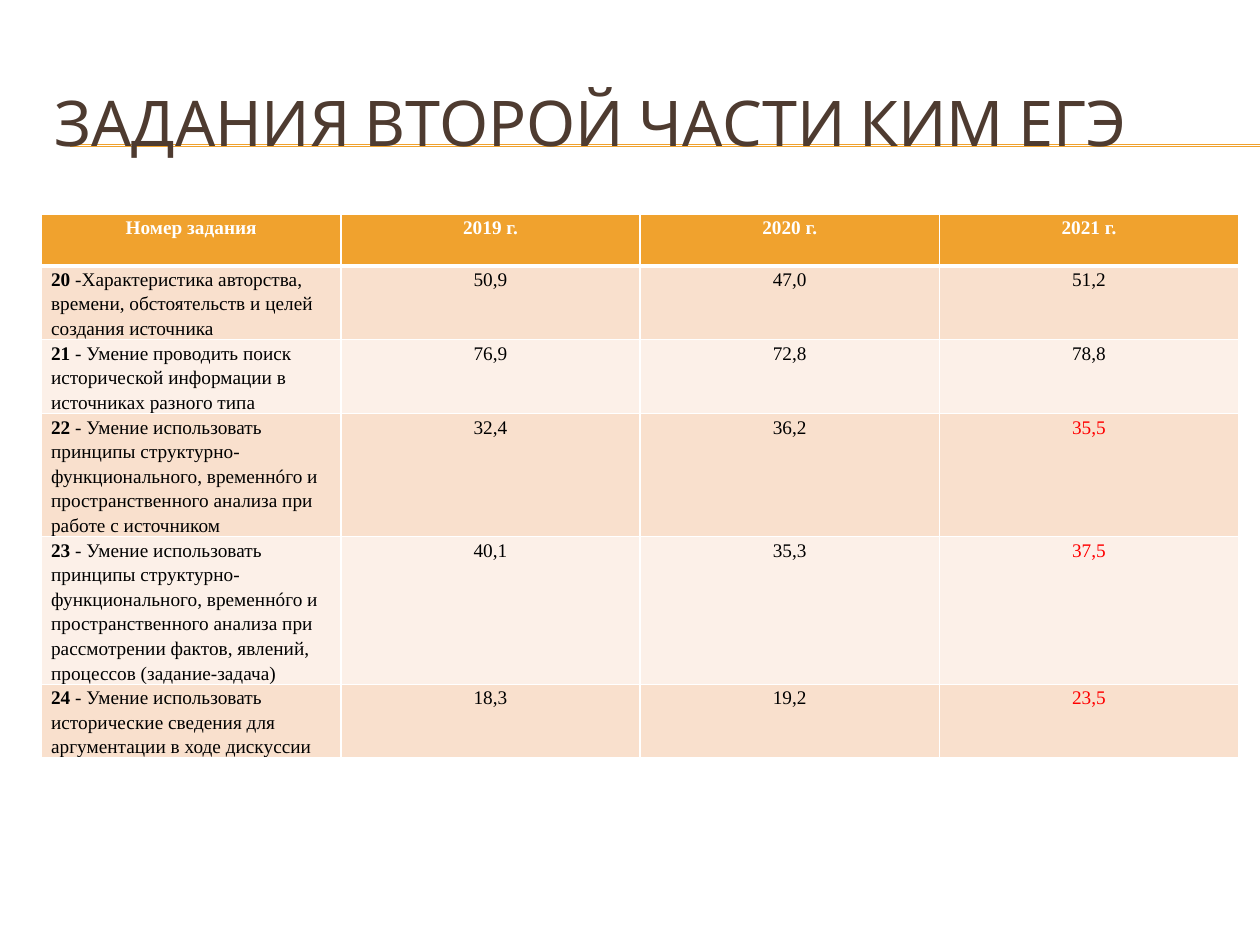
from lxml import etree
from pptx import Presentation
from pptx.dml.color import RGBColor
from pptx.enum.shapes import MSO_CONNECTOR
from pptx.enum.text import MSO_ANCHOR, MSO_AUTO_SIZE, PP_ALIGN
from pptx.oxml.ns import qn
from pptx.util import Cm, Pt

STRAIGHT = MSO_CONNECTOR.STRAIGHT
MIDDLE = MSO_ANCHOR.MIDDLE
NO_AUTOFIT = MSO_AUTO_SIZE.NONE
LEFT, CENTER = PP_ALIGN.LEFT, PP_ALIGN.CENTER

# Content
TITLE = "ЗАДАНИЯ ВТОРОЙ ЧАСТИ КИМ ЕГЭ"
HEADERS = ["Номер задания", "2019 г.", "2020 г.", "2021 г."]
TASKS = [
    ("20", " -Характеристика авторства, времени, обстоятельств и целей создания источника",
     ["50,9", "47,0", "51,2"]),
    ("21", " - Умение проводить поиск исторической информации в источниках разного типа",
     ["76,9", "72,8", "78,8"]),
    ("22", " - Умение использовать принципы структурно-функционального, временнóго и "
           "пространственного анализа при работе с источником",
     ["32,4", "36,2", "35,5"]),
    ("23", " - Умение использовать принципы структурно-функционального, временнóго и "
           "пространственного анализа при рассмотрении фактов, явлений, процессов (задание-задача)",
     ["40,1", "35,3", "37,5"]),
    ("24", " - Умение использовать исторические сведения для аргументации в ходе дискуссии",
     ["18,3", "19,2", "23,5"]),
]
HIGHLIGHTED = {"35,5", "37,5", "23,5"}

THEME = {
    "title_font": "Cabin", "title_size": Pt(36), "title": "4E3B30",
    "table_font": "Times New Roman", "table_size": Pt(11),
    "accent": "F0A22E", "bands": ["F9E0CD", "FCF0E8"],
    "text": "000000", "light": "FFFFFF", "highlight": "FF0000",
    "rule": Pt(0.75), "border": Pt(1), "header_border": Pt(3),
}

# Layout
WIDTH, HEIGHT = Cm(25.4), Cm(19.05)
MARGIN, CONTENT_WIDTH = Cm(0.84), Cm(24.13)
TITLE_TOP, TITLE_HEIGHT = Cm(1.27), Cm(2.34)
TABLE_TOP, ROW_HEIGHT = Cm(4.32), Cm(1.04)
RULE_LEFT, RULE_TOPS = Cm(1.42), [Cm(2.92), Cm(2.95)]
CELL_INSET = Cm(0.19)


def color(name):
    return RGBColor.from_string(name)


def style_span(span, font, size, fill, bold=False):
    span.font.name = font
    span.font.size = size
    span.font.bold = bold
    span.font.color.rgb = color(fill)


def add_rule(slide, top):
    rule = slide.shapes.add_connector(STRAIGHT, RULE_LEFT, top, WIDTH, top)
    rule.line.color.rgb = color(THEME["accent"])
    rule.line.width = THEME["rule"]
    etree.SubElement(rule._element.spPr, qn("a:effectLst"))


def add_borders(cell, top, bottom):
    properties = cell._tc.get_or_add_tcPr()
    widths = {"L": THEME["border"], "R": THEME["border"], "T": top, "B": bottom}
    for side, width in widths.items():
        line = etree.SubElement(properties, qn(f"a:ln{side}"), w=str(width))
        fill = etree.SubElement(line, qn("a:solidFill"))
        etree.SubElement(fill, qn("a:srgbClr"), val=THEME["light"])


def fill_cell(cell, spans, fill, alignment, top, bottom):
    """Spans are (text, colour, bold) triples."""
    add_borders(cell, top, bottom)
    cell.fill.solid()
    cell.fill.fore_color.rgb = color(fill)
    cell.margin_left = cell.margin_right = CELL_INSET
    cell.margin_top = cell.margin_bottom = 0
    para = cell.text_frame.paragraphs[0]
    para.alignment = alignment
    para.line_spacing = 1.15
    for text, ink, bold in spans:
        span = para.add_run()
        span.text = text
        style_span(span, THEME["table_font"], THEME["table_size"], ink, bold)


def add_title(slide):
    title = slide.shapes.title
    title.left, title.top = MARGIN, TITLE_TOP
    title.width, title.height = CONTENT_WIDTH, TITLE_HEIGHT
    frame = title.text_frame
    frame.text = TITLE
    frame.word_wrap = True
    frame.auto_size = NO_AUTOFIT
    frame.vertical_anchor = MIDDLE
    para = frame.paragraphs[0]
    para.alignment = LEFT
    style_span(para.runs[0], THEME["title_font"], THEME["title_size"], THEME["title"])
    # Bring the title in front of the rules
    slide.shapes._spTree.append(title._element)


def add_results(slide):
    rows, columns = len(TASKS) + 1, len(HEADERS)
    table = slide.shapes.add_table(rows, columns, MARGIN, TABLE_TOP,
                                   CONTENT_WIDTH, ROW_HEIGHT * rows).table
    thin, thick = THEME["border"], THEME["header_border"]
    for column, header in enumerate(HEADERS):
        fill_cell(table.cell(0, column), [(header, THEME["light"], True)],
                  THEME["accent"], CENTER, thin, thick)
    for row, (number, skill, scores) in enumerate(TASKS, start=1):
        band = THEME["bands"][(row - 1) % 2]
        top = thick if row == 1 else thin
        label = [(number, THEME["text"], True), (skill, THEME["text"], False)]
        fill_cell(table.cell(row, 0), label, band, LEFT, top, thin)
        for column, score in enumerate(scores, start=1):
            ink = THEME["highlight" if score in HIGHLIGHTED else "text"]
            fill_cell(table.cell(row, column), [(score, ink, False)],
                      band, CENTER, top, thin)


def main():
    deck = Presentation()
    deck.slide_width, deck.slide_height = WIDTH, HEIGHT
    slide = deck.slides.add_slide(deck.slide_layouts[5])
    for top in RULE_TOPS:
        add_rule(slide, top)
    add_title(slide)
    add_results(slide)
    deck.save("out.pptx")


if __name__ == "__main__":
    main()
